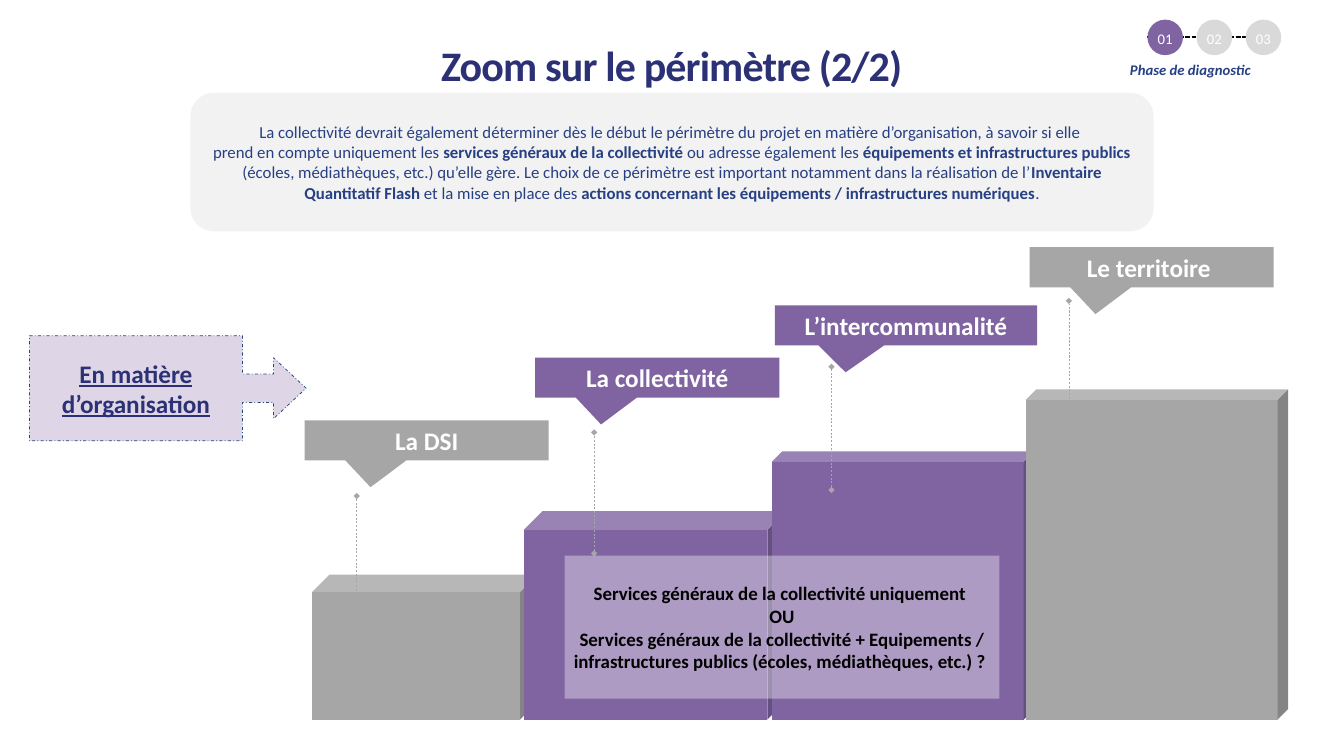
from dataclasses import dataclass
from typing import NamedTuple

import pptx
import pptx.dml.color
import pptx.enum.dml
import pptx.enum.shapes
import pptx.enum.text
import pptx.oxml.ns
import pptx.util

Inches = pptx.util.Inches
Pt = pptx.util.Pt
SHAPE = pptx.enum.shapes.MSO_SHAPE
DASH = pptx.enum.dml.MSO_LINE
ALIGN = pptx.enum.text.PP_ALIGN
ANCHOR = pptx.enum.text.MSO_ANCHOR
qn = pptx.oxml.ns.qn


@dataclass(frozen=True)
class Theme:
    font: str = "Calibri"
    purple: str = "8064A2"
    grey: str = "A6A6A6"
    pale: str = "F2F2F2"
    inactive: str = "D9D9D9"
    navy: str = "2C3176"
    blue: str = "274084"
    outline: str = "1F497D"
    white: str = "FFFFFF"
    black: str = "000000"
    title: int = 40
    label: int = 24
    question: int = 18
    body: int = 16
    small: int = 14


class Box(NamedTuple):
    x: float
    y: float
    w: float
    h: float


@dataclass(frozen=True)
class Step:
    label: str
    color: str
    cube: Box
    depth: float
    callout: Box
    line_x: float
    line_top: float
    line_bottom: float


T = Theme()
BASE = 9.52  # floor shared by all steps


def step(label: str, color: str, cube: tuple, depth: float,
         callout: tuple, line: tuple) -> Step:
    x, y, w = cube
    return Step(label, color, Box(x, y, w, BASE - y), depth, Box(*callout, 0.53), *line)


STEPS = [
    step("La DSI", T.grey, (4.13, 7.6, 2.98), 0.12, (4.03, 5.56, 3.23), (4.72, 6.56, 8.15)),
    step("La collectivité", T.purple, (6.93, 6.76, 3.47), 0.09, (7.08, 4.73, 3.23), (7.86, 5.72, 7.32)),
    step("L’intercommunalité", T.purple, (10.21, 5.97, 3.47), 0.04, (10.25, 4.04, 3.47), (11, 4.85, 6.48)),
    step("Le territoire ", T.grey, (13.57, 5.15, 3.47), 0.04, (13.62, 3.27, 3.23), (14.14, 3.98, 5.61)),
]

# Lines of the introduction; each one is a list of (text, bold)
INTRO = [
    [("La collectivité devrait également déterminer dès le début le périmètre du projet "
      "en matière d’organisation, à savoir si elle ", False)],
    [("prend en compte uniquement les ", False),
     ("services généraux de la collectivité ", True),
     ("ou adresse également les ", False),
     ("équipements et infrastructures publics ", True),
     ("(écoles, médiathèques, etc.) qu’elle gère. Le choix de ce périmètre est important "
      "notamment dans la réalisation de l’", False),
     ("Inventaire Quantitatif Flash ", True),
     ("et la mise en place des ", False),
     ("actions concernant les équipements / infrastructures numériques", True),
     (".", False)],
]

QUESTION = [
    "Services généraux de la collectivité uniquement ",
    "OU",
    "Services généraux de la collectivité + Equipements / "
    "infrastructures publics (écoles, médiathèques, etc.) ? ",
]


def rgb(color: str) -> pptx.dml.color.RGBColor:
    return pptx.dml.color.RGBColor.from_string(color)


def style(r, size: int, color: str, bold: bool = False) -> None:
    r.font.name, r.font.size, r.font.bold = T.font, Pt(size), bold
    r.font.color.rgb = rgb(color)


def add_shape(s, kind, box: Box, fill: str, adj: tuple = (), alpha: int = 100):
    sp = s.shapes.add_shape(kind, *map(Inches, box))
    sp.shadow.inherit = False
    sp.line.fill.background()
    sp.fill.solid()
    sp.fill.fore_color.rgb = rgb(fill)
    for i, value in enumerate(adj):
        sp.adjustments[i] = value
    if alpha < 100:
        clr = sp._element.spPr.find(qn("a:solidFill"))[0]
        clr.append(clr.makeelement(qn("a:alpha"), {"val": str(alpha * 1000)}))
    return sp


def write(sp, lines: list, size: int, color: str, bold: bool = False,
          align=ALIGN.CENTER, anchor=ANCHOR.MIDDLE):
    tf = sp.text_frame
    tf.word_wrap = True
    tf.vertical_anchor = anchor
    tf.text = "\n".join(lines)
    for p in tf.paragraphs:
        p.alignment = align
        for r in p.runs:
            style(r, size, color, bold)
    return tf


def set_margins(tf, x: float, y: float) -> None:
    tf.margin_left = tf.margin_right = Inches(x)
    tf.margin_top = tf.margin_bottom = Inches(y)


def add_text(s, box: Box, text: str, size: int, color: str, **options):
    return write(s.shapes.add_textbox(*map(Inches, box)), [text], size, color, **options)


def add_line(s, start: tuple, end: tuple, color: str, width: float, dash, ends: str = ""):
    c = s.shapes.add_connector(pptx.enum.shapes.MSO_CONNECTOR.STRAIGHT,
                               *map(Inches, start + end))
    c.line.color.rgb = rgb(color)
    c.line.width = Pt(width)
    c.line.dash_style = dash
    spPr = c._element.spPr
    if ends:
        ln = spPr.find(qn("a:ln"))
        for tag in ("a:headEnd", "a:tailEnd"):
            ln.append(ln.makeelement(qn(tag), {"type": ends}))
    spPr.append(spPr.makeelement(qn("a:effectLst"), {}))


def add_step(s, item: Step) -> None:
    add_shape(s, SHAPE.CUBE, item.cube, item.color, (item.depth,))
    sp = add_shape(s, SHAPE.RECTANGULAR_CALLOUT, item.callout, item.color, (-0.23, 1.17))
    set_margins(write(sp, [item.label], T.label, T.white, True), 0.13, 0.07)
    add_line(s, (item.line_x, item.line_bottom), (item.line_x, item.line_top),
             T.grey, 0.5, DASH.DASH, "diamond")


def add_intro(s) -> None:
    sp = add_shape(s, SHAPE.FLOWCHART_ALTERNATE_PROCESS, Box(2.52, 1.23, 12.74, 1.83), T.pale)
    p = write(sp, [], T.body, T.blue).paragraphs[0]
    for i, line in enumerate(INTRO):
        if i:
            p.add_line_break()
        for text, bold in line:
            r = p.add_run()
            r.text = text
            style(r, T.body, T.blue, bold)


def add_progress(s) -> None:
    add_line(s, (15.18, 0.49), (16.93, 0.49), T.black, 1.5, DASH.SQUARE_DOT)
    for i in range(3):
        x = 15.18 + 0.65 * i
        add_shape(s, SHAPE.OVAL, Box(x, 0.26, 0.47, 0.47), T.inactive if i else T.purple)
        tf = add_text(s, Box(x, 0.22, 0.47, 0.44), f"{i + 1:02}", T.small, T.white)
        tf.paragraphs[0].line_spacing = Pt(26.7)
    tf = add_text(s, Box(14.85, 0.76, 2.42, 0.34), "Phase de diagnostic ", T.small, T.blue,
                  bold=True, align=ALIGN.LEFT, anchor=ANCHOR.TOP)
    tf.word_wrap = False
    tf.paragraphs[0].runs[0].font.italic = True


def main() -> None:
    prs = pptx.Presentation()
    prs.slide_width, prs.slide_height = Inches(17.78), Inches(10)
    s = prs.slides.add_slide(prs.slide_layouts[6])

    # Staircase and the question laid over it
    for item in STEPS:
        add_step(s, item)
    sp = add_shape(s, SHAPE.RECTANGLE, Box(7.47, 7.35, 5.75, 1.89), T.white, alpha=36)
    write(sp, QUESTION, T.question, T.black, True)

    # Title and introduction
    tf = add_text(s, Box(1.09, 0.52, 15.59, 0.74), "Zoom sur le périmètre (2/2)",
                  T.title, T.navy, bold=True, anchor=ANCHOR.TOP)
    set_margins(tf, 0, 0)
    tf.paragraphs[0].runs[0].font._element.set("spc", "-80")
    add_intro(s)

    # Arrow naming the theme
    sp = add_shape(s, SHAPE.RIGHT_ARROW_CALLOUT, Box(0.39, 4.44, 3.66, 1.39), T.purple,
                   (0.27, 0.29, 0.31, 0.77), alpha=26)
    sp.line.color.rgb = rgb(T.outline)
    sp.line.width = Pt(0.75)
    sp.line.dash_style = DASH.DASH_DOT
    tf = write(sp, ["En matière d’organisation"], T.label, T.navy, True)
    tf.paragraphs[0].runs[0].font.underline = True

    # Progress marker
    add_progress(s)
    prs.save("out.pptx")


if __name__ == "__main__":
    main()
